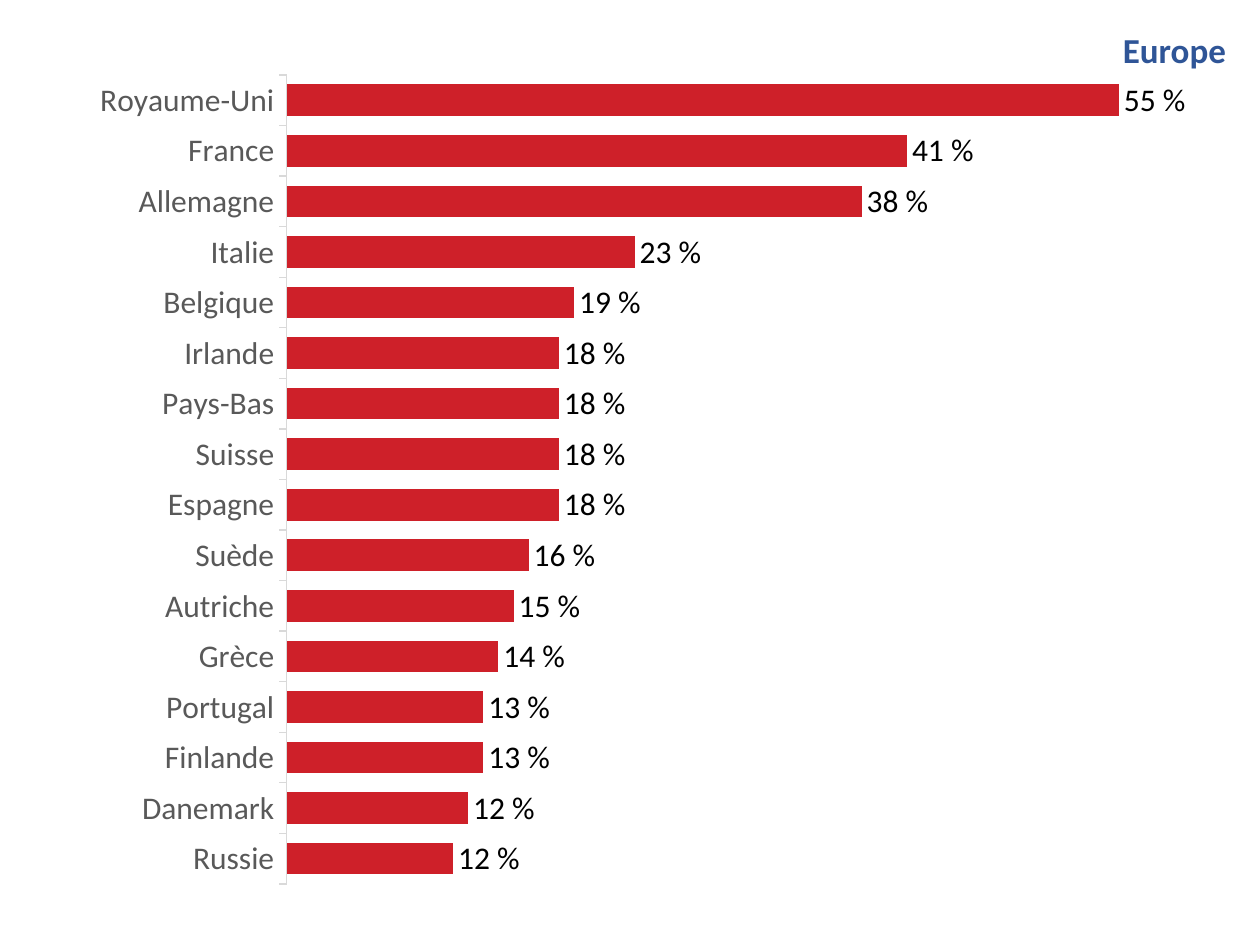
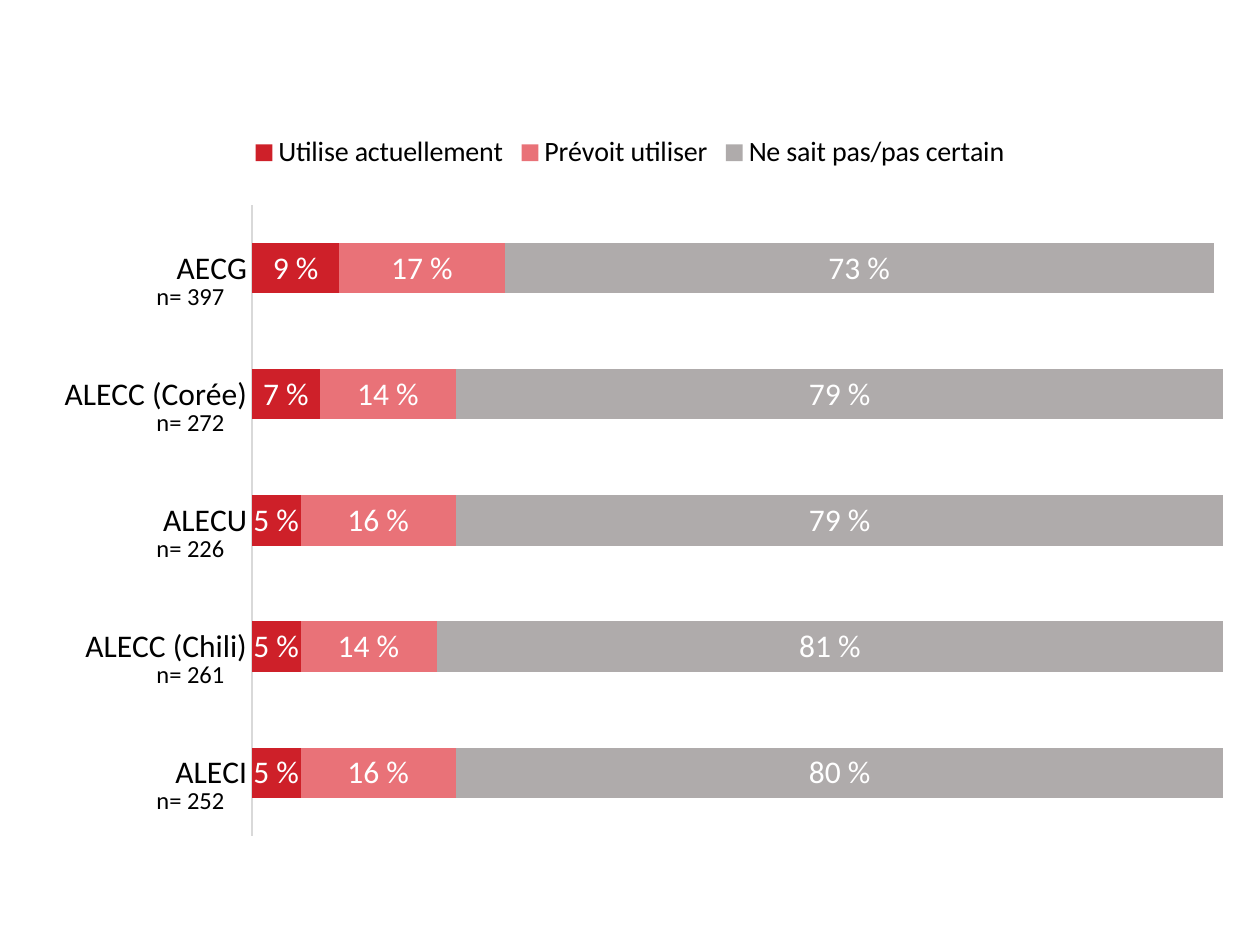
from lxml import etree
from pptx import Presentation
from pptx import util as u
from pptx.chart.data import CategoryChartData
from pptx.dml.color import RGBColor
from pptx.enum import chart as ch, text
from pptx.oxml.ns import qn

RED, PINK, GREY = "CE2029", "E97278", "AFABAB"
BLACK, WHITE, SLATE, LINE, BLUE = "000000", "FFFFFF", "595959", "D9D9D9", "2F5597"
FACE = "Calibri"

deck = Presentation()
deck.slide_width, deck.slide_height = u.Inches(10), u.Inches(7.5)
W, H = deck.slide_width, deck.slide_height
blank = deck.slide_layouts[6]


def style(font, size, hue, bold=False):
    font.name, font.size, font.bold = FACE, u.Pt(size), bold
    font.color.rgb = RGBColor.from_string(hue)


def note(page, words, box, size, hue, bold=False, wrap=True):
    frame = page.shapes.add_textbox(*[int(v) for v in box]).text_frame
    frame.word_wrap = wrap
    frame.auto_size = text.MSO_AUTO_SIZE.SHAPE_TO_FIT_TEXT
    par = frame.paragraphs[0]
    par.alignment = text.PP_ALIGN.RIGHT
    run = par.add_run()
    run.text = words
    style(run.font, size, hue, bold)


# Data: each series holds name, values, fill
lands = {
    "Royaume-Uni": 0.55, "France": 0.41, "Allemagne": 0.38, "Italie": 0.23,
    "Belgique": 0.19, "Irlande": 0.18, "Pays-Bas": 0.18, "Suisse": 0.18,
    "Espagne": 0.18, "Suède": 0.16, "Autriche": 0.15, "Grèce": 0.14,
    "Portugal": 0.13, "Finlande": 0.13, "Danemark": 0.12, "Russie": 0.11,
}
deals = {"AECG": 397, "ALECC (Corée)": 272, "ALECU": 226,
         "ALECC (Chili)": 261, "ALECI": 252}
usage = [
    ("Utilise actuellement", (0.09, 0.07, 0.05, 0.05, 0.05), RED),
    ("Prévoit utiliser", (0.17, 0.14, 0.16, 0.14, 0.16), PINK),
    ("Ne sait pas/pas certain", (0.73, 0.79, 0.79, 0.81, 0.8), GREY),
]
kinds, spots, ticks = ch.XL_CHART_TYPE, ch.XL_LABEL_POSITION, ch.XL_TICK_MARK
plans = [
    dict(kind=kinds.BAR_CLUSTERED, cats=lands,
         rows=[("Series 1", tuple(lands.values()), RED)],
         box=(0.016, 0.068, 0.966, 0.879), area=(0.219, 0.013, 0.746, 0.974),
         top=0.6, gap=60, lap=0, tick=ticks.OUTSIDE, axis=SLATE,
         label=BLACK, spot=spots.OUTSIDE_END),
    dict(kind=kinds.BAR_STACKED, cats=deals, rows=usage,
         box=(0, 0.128, 1, 0.773), area=(0.2, 0.115, 0.771, 0.864),
         top=1, gap=150, lap=100, tick=ticks.NONE, axis=BLACK,
         label=WHITE, spot=spots.CENTER),
]

# Bar charts, one per slide
pages, charts = [], []
for plan in plans:
    page = deck.slides.add_slide(blank)
    data = CategoryChartData(number_format="0%")
    data.categories = list(plan["cats"])
    for name, vals, hue in plan["rows"]:
        data.add_series(name, vals)
    x, y, w, h = plan["box"]
    chart = page.shapes.add_chart(plan["kind"], int(x * W), int(y * H),
                                  int(w * W), int(h * H), data).chart
    style(chart.font, 10, BLACK)
    chart.has_title = chart.has_legend = False

    # Axes
    cat, val = chart.category_axis, chart.value_axis
    cat.reverse_order = True
    cat.major_tick_mark, cat.minor_tick_mark = plan["tick"], ticks.NONE
    cat.format.line.color.rgb = RGBColor.from_string(LINE)
    cat.format.line.width = u.Pt(0.75)
    style(cat.tick_labels.font, 18, plan["axis"])
    val.minimum_scale, val.maximum_scale = 0, plan["top"]
    val.has_major_gridlines = val.visible = False

    # Bars and their labels
    plot = chart.plots[0]
    plot.gap_width, plot.overlap = plan["gap"], plan["lap"]
    plot.vary_by_categories = False
    for bars, (name, vals, hue) in zip(plot.series, plan["rows"]):
        bars.format.fill.solid()
        bars.format.fill.fore_color.rgb = RGBColor.from_string(hue)
        tags = bars.data_labels
        tags.show_value = True
        tags.number_format, tags.number_format_is_linked = "0 %", False
        tags.position = plan["spot"]
        style(tags.font, 18, plan["label"])

    # Fixed inner plot area
    area = chart.element.find(".//" + qn("c:plotArea"))
    for old in area.findall(qn("c:layout")):
        area.remove(old)
    layout = etree.Element(qn("c:layout"))
    area.insert(0, layout)
    manual = etree.SubElement(layout, qn("c:manualLayout"))
    marks = [("layoutTarget", "inner"), ("xMode", "edge"), ("yMode", "edge")]
    for tag, mark in marks + list(zip("xywh", plan["area"])):
        etree.SubElement(manual, qn("c:" + tag)).set("val", str(mark))
    pages.append(page)
    charts.append(chart)

# Slide 1: region name, and the last label rounded up
note(pages[0], "Europe", (0.88 * W, 0.024 * H, 0.103 * W, 0.059 * H),
     20, BLUE, bold=True, wrap=False)
tag = charts[0].plots[0].series[0].points[len(lands) - 1].data_label
run = tag.text_frame.paragraphs[0].add_run()
run.text = "12 %"
style(run.font, 18, BLACK)
tag.position = spots.OUTSIDE_END

# Slide 2: legend and sample sizes
charts[1].has_legend = True
key = charts[1].legend
key.position, key.include_in_layout = ch.XL_LEGEND_POSITION.TOP, False
style(key.font, 16, BLACK)
for row, size in enumerate(deals.values()):
    note(pages[1], f"n= {size}",
         (0.088 * W, u.Inches(2.18 + row), 0.1 * W, 0.045 * H), 14, BLACK)

deck.save("out.pptx")
